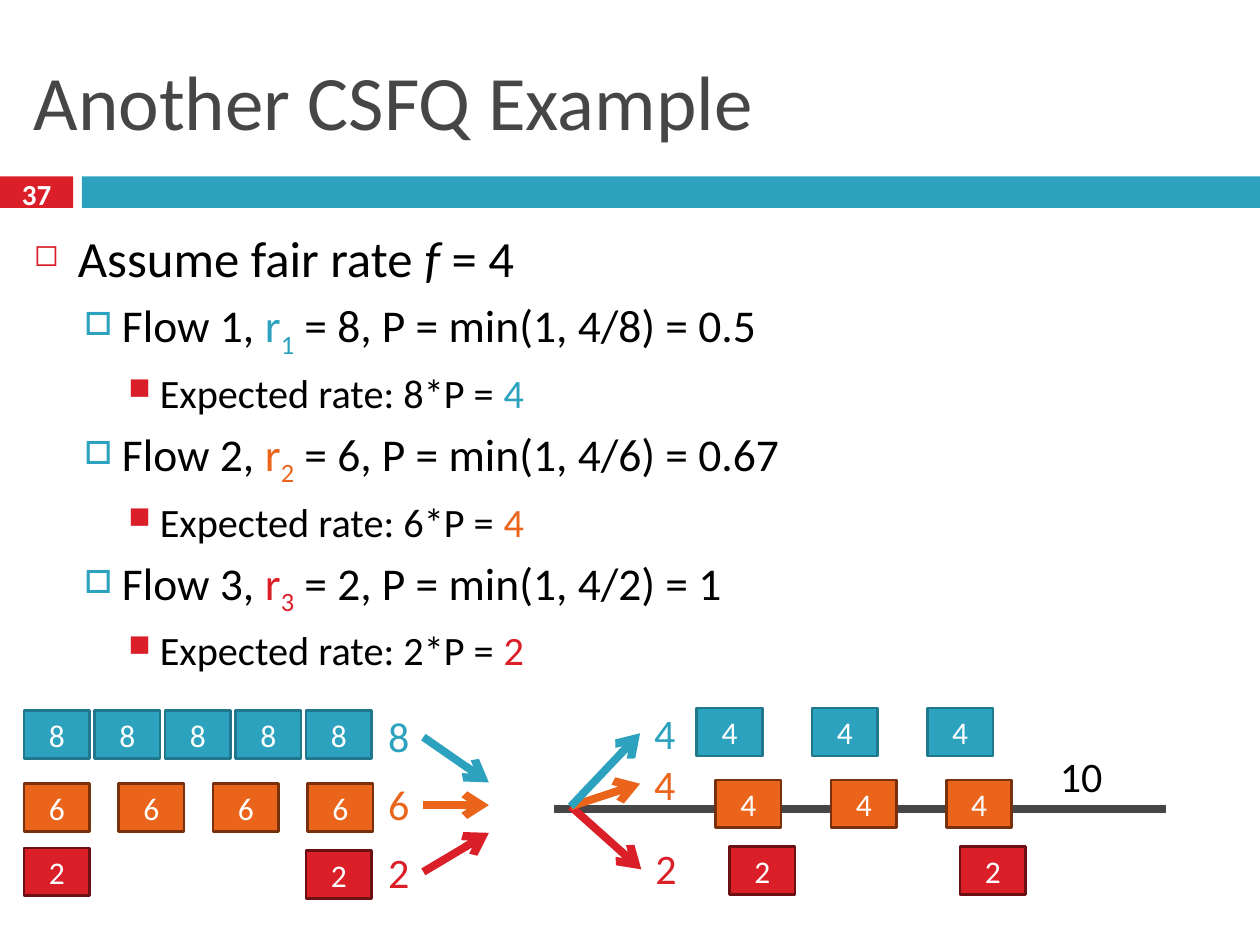
from lxml.etree import SubElement as Sub
from pptx import Presentation
from pptx.dml.color import RGBColor
from pptx.enum.shapes import MSO_CONNECTOR as Conn, MSO_SHAPE as Shape
from pptx.enum.text import MSO_ANCHOR as Anchor, MSO_AUTO_SIZE as Auto, PP_ALIGN as Align
from pptx.oxml.ns import qn
from pptx.util import Inches, Pt

BLUE, ORANGE, RED = "2DA2BF", "EB641B", "DA1F28"
GREY, BLACK, WHITE = "464646", "000000", "FFFFFF"
EDGE = {BLUE: "21788D", ORANGE: "78310B", RED: "6D1014"}


def paint(item, color):
    """Give a fill, line fill or font colour its hex value."""
    if hasattr(item, "solid"):
        item.solid()
        item = item.fore_color
    item.rgb = RGBColor.from_string(color)


def write(para, text, size, color=BLACK, bold=False, italic=False, base=0):
    """Add a run; base is the baseline shift in percent."""
    run = para.add_run()
    run.text = text
    font = run.font
    font.name, font.size, font.bold, font.italic = "Calibri", Pt(size), bold, italic
    paint(font.color, color)
    if base:
        run._r.get_or_add_rPr().set("baseline", str(base * 1000))


prs = Presentation()
prs.slide_width, prs.slide_height = Inches(10), Inches(7.5)
shapes = prs.slides.add_slide(prs.slide_layouts[6]).shapes

# Header bars
for left, width, color in [(0, 0.58, RED), (0.65, 9.35, BLUE)]:
    bar = shapes.add_shape(Shape.RECTANGLE, Inches(left), Inches(1.4),
                           Inches(width), Inches(0.25))
    bar.shadow.inherit = False
    paint(bar.fill, color)
    bar.line.fill.background()

# Title and slide number
for text, spot, size, color, align, bold in [
    ("Another CSFQ Example", (0.17, 0.25, 9.67, 1.08), 44, GREY, Align.LEFT, False),
    ("37", (0, 1.37, 0.58, 0.33), 16.6, WHITE, Align.CENTER, True),
]:
    frame = shapes.add_textbox(*map(Inches, spot)).text_frame
    frame.word_wrap = True
    frame.vertical_anchor = Anchor.MIDDLE
    para = frame.paragraphs[0]
    para.alignment = align
    write(para, text, size, color, bold=bold)

# Bulleted text: each paragraph is a level and its runs
body = [(0, [("Assume fair rate ", {}), ("f", {"italic": True}), (" = 4", {})])]
for num, (color, rate, prob, out) in enumerate(
        [(BLUE, 8, "0.5", 4), (ORANGE, 6, "0.67", 4), (RED, 2, "1", 2)], 1):
    body.append((1, [(f"Flow {num}, ", {}), ("r", {"color": color}),
                     (str(num), {"color": color, "base": -25}),
                     (f" = {rate}, P = min(1, 4/{rate}) = {prob}", {})]))
    body.append((2, [(f"Expected rate: {rate}*P = ", {}), (str(out), {"color": color})]))

# Size, space before, indent, hanging, bullet, bullet colour, bullet percent
levels = [(29, 7, 0.35, 0.35, "◻", RED, 60),
          (26, 5.5, 0.7, 0.3, "□", BLUE, 70),
          (23, 5, 1, 0.25, "■", RED, 75)]
frame = shapes.add_textbox(*map(Inches, (0.17, 1.75, 9.67, 3.65))).text_frame
frame.word_wrap = True
for index, (level, runs) in enumerate(body):
    size, space, indent, hang, mark, color, scale = levels[level]
    para = frame.add_paragraph() if index else frame.paragraphs[0]
    para.level = level
    para.space_before = Pt(space)
    props = para._p.get_or_add_pPr()
    props.set("marL", str(Inches(indent)))
    props.set("indent", str(-Inches(hang)))
    Sub(Sub(props, qn("a:buClr")), qn("a:srgbClr"), val=color)
    Sub(props, qn("a:buSzPct"), val=str(scale * 1000))
    Sub(props, qn("a:buChar"), char=mark)
    for text, look in runs:
        write(para, text, size, **look)

# Link and flow arrows
for x1, y1, x2, y2, color in [
    (4.4, 6.42, 9.25, 6.42, GREY),
    (3.36, 5.85, 3.88, 6.21, BLUE),
    (3.36, 6.39, 3.88, 6.39, ORANGE),
    (3.36, 6.92, 3.88, 6.61, RED),
    (4.53, 6.4, 5.09, 6.9, RED),
    (4.53, 6.4, 5.08, 6.22, ORANGE),
    (4.53, 6.4, 5.08, 5.82, BLUE),
]:
    link = shapes.add_connector(Conn.STRAIGHT, *map(Inches, (x1, y1, x2, y2)))
    link.line.width = Pt(4.5)
    paint(link.line.fill, color)
    if color != GREY:
        Sub(link.line._get_or_add_ln(), qn("a:tailEnd"), type="arrow")
    Sub(link._element.spPr, qn("a:effectLst"))

# Packets: text, colour, top, first left, step, count
for text, color, top, first, step, count in [
    ("8", BLUE, 5.64, 0.19, 0.56, 5),
    ("6", ORANGE, 6.22, 0.19, 0.75, 4),
    ("2", RED, 6.73, 0.19, 0, 1),
    ("2", RED, 6.75, 2.43, 0, 1),
    ("4", BLUE, 5.62, 5.53, 0.915, 3),
    ("4", ORANGE, 6.19, 5.68, 0.915, 3),
    ("2", RED, 6.72, 5.79, 1.83, 2),
]:
    for col in range(count):
        box = shapes.add_shape(Shape.RECTANGLE, Inches(first + col * step), Inches(top),
                               Inches(0.52), Inches(0.38))
        box.shadow.inherit = False
        paint(box.fill, color)
        paint(box.line.fill, EDGE[color])
        box.line.width = Pt(1.5)
        box.text_frame.vertical_anchor = Anchor.MIDDLE
        para = box.text_frame.paragraphs[0]
        para.alignment = Align.CENTER
        write(para, text, 18, WHITE)

# Rate labels
for text, left, top, width, color in [
    ("10", 8.29, 5.91, 0.58, BLACK),
    ("8", 2.97, 5.59, 0.39, BLUE),
    ("6", 2.97, 6.13, 0.39, ORANGE),
    ("2", 2.97, 6.67, 0.39, RED),
    ("4", 5.08, 5.57, 0.39, BLUE),
    ("4", 5.08, 5.97, 0.39, ORANGE),
    ("2", 5.09, 6.64, 0.39, RED),
]:
    frame = shapes.add_textbox(*map(Inches, (left, top, width, 0.5))).text_frame
    frame.word_wrap = False
    frame.auto_size = Auto.SHAPE_TO_FIT_TEXT
    para = frame.paragraphs[0]
    para.alignment = Align.CENTER
    write(para, text, 24, color)

prs.save("out.pptx")
